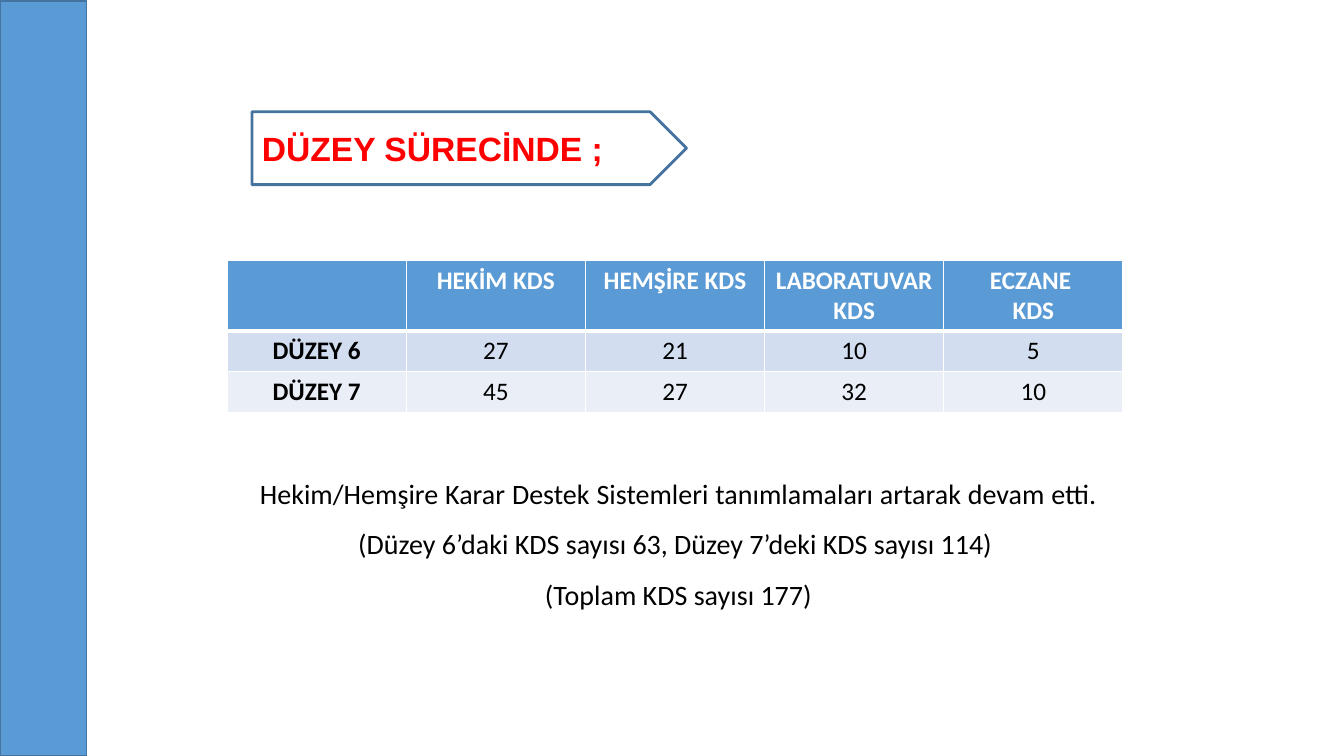
from lxml.etree import SubElement
from pptx import Presentation
from pptx.dml.color import RGBColor
from pptx.enum.shapes import MSO_SHAPE
from pptx.enum.text import MSO_ANCHOR, PP_ALIGN
from pptx.oxml.ns import qn
from pptx.util import Pt

COLORS = {
    "blue": "5B9BD5", "outline": "43739E", "white": "FFFFFF",
    "black": "000000", "red": "FF0000", "band1": "D2DEEF", "band2": "EAEFF7",
}
TITLE = "DÜZEY SÜRECİNDE ;"
TABLE = [
    ["", "HEKİM KDS", "HEMŞİRE KDS", "LABORATUVAR KDS", "ECZANE \nKDS"],
    ["DÜZEY 6", "27", "21", "10", "5"],
    ["DÜZEY 7", "45", "27", "32", "10"],
]
ROW_FILLS = ["blue", "band1", "band2"]
ROW_HEIGHTS = [49.5, 29.2, 29.2]
COL_WIDTH = 128
NOTES = [
    ("Hekim/Hemşire Karar Destek Sistemleri tanımlamaları artarak devam etti. ", PP_ALIGN.JUSTIFY),
    ("(Düzey 6’daki KDS sayısı 63, Düzey 7’deki KDS sayısı 114) ", PP_ALIGN.CENTER),
    ("(Toplam KDS sayısı 177)", PP_ALIGN.CENTER),
]


def rgb(name):
    return RGBColor.from_string(COLORS[name])


def add_run(p, text, size, color, bold=False, font="Calibri"):
    r = p.add_run()
    r.text = text
    r.font.size, r.font.name, r.font.bold = Pt(size), font, bold
    r.font.color.rgb = rgb(color)


def add_box(slide, kind, x, y, w, h, fill, line_width):
    sp = slide.shapes.add_shape(kind, Pt(x), Pt(y), Pt(w), Pt(h))
    sp.shadow.inherit = False
    sp.fill.solid()
    sp.fill.fore_color.rgb = rgb(fill)
    sp.line.color.rgb = rgb("outline")
    sp.line.width = Pt(line_width)
    return sp


def set_borders(cell, bottom):
    """Draw white cell borders, 1 pt except for the given bottom width."""
    tcPr = cell._tc.get_or_add_tcPr()
    widths = {"a:lnL": 1, "a:lnR": 1, "a:lnT": 1, "a:lnB": bottom}
    for i, (tag, width) in enumerate(widths.items()):
        ln = SubElement(tcPr, qn(tag), w=str(Pt(width)))
        fill = SubElement(ln, qn("a:solidFill"))
        SubElement(fill, qn("a:srgbClr"), val=COLORS["white"])
        tcPr.insert(i, ln)  # borders precede the cell fill


def add_kds_table(slide):
    table = slide.shapes.add_table(
        len(TABLE), len(TABLE[0]), Pt(162.2), Pt(185.8),
        Pt(COL_WIDTH * len(TABLE[0])), Pt(sum(ROW_HEIGHTS))).table
    for col in table.columns:
        col.width = Pt(COL_WIDTH)
    for i, texts in enumerate(TABLE):
        table.rows[i].height = Pt(ROW_HEIGHTS[i])
        header = i == 0
        for j, text in enumerate(texts):
            cell = table.cell(i, j)
            cell.fill.solid()
            cell.fill.fore_color.rgb = rgb(ROW_FILLS[i])
            # the edge under the header is shared with the row below
            set_borders(cell, 3 if header else 1)
            tf = cell.text_frame
            for k, line in enumerate(text.split("\n")):
                p = tf.add_paragraph() if k else tf.paragraphs[0]
                p.alignment = PP_ALIGN.CENTER
                if line:
                    add_run(p, line, 18, "white" if header else "black", header or j == 0)


def add_notes_text(slide):
    tf = slide.shapes.add_textbox(Pt(178.6), Pt(324.7), Pt(612), Pt(116.6)).text_frame
    tf.word_wrap = True
    for i, (text, align) in enumerate(NOTES):
        p = tf.add_paragraph() if i else tf.paragraphs[0]
        p.alignment = align
        p.line_spacing = 1.5
        if align == PP_ALIGN.JUSTIFY:
            pPr = p._p.get_or_add_pPr()
            pPr.set("marL", str(Pt(36)))
            pPr.set("indent", str(-Pt(36)))
        add_run(p, text, 20, "black")


def main():
    prs = Presentation()
    prs.slide_width, prs.slide_height = Pt(960), Pt(540)
    slide = prs.slides.add_slide(prs.slide_layouts[6])

    add_box(slide, MSO_SHAPE.RECTANGLE, 0, 0.6, 62, 539.4, "blue", 1)
    add_notes_text(slide)
    banner = add_box(slide, MSO_SHAPE.PENTAGON, 180, 79.9, 310.4, 52, "white", 2)
    tf = banner.text_frame
    tf.word_wrap = True
    tf.vertical_anchor = MSO_ANCHOR.MIDDLE
    tf.paragraphs[0].alignment = PP_ALIGN.LEFT
    add_run(tf.paragraphs[0], TITLE, 24, "red", True, "Arial")
    add_kds_table(slide)

    prs.save("out.pptx")


if __name__ == "__main__":
    main()
